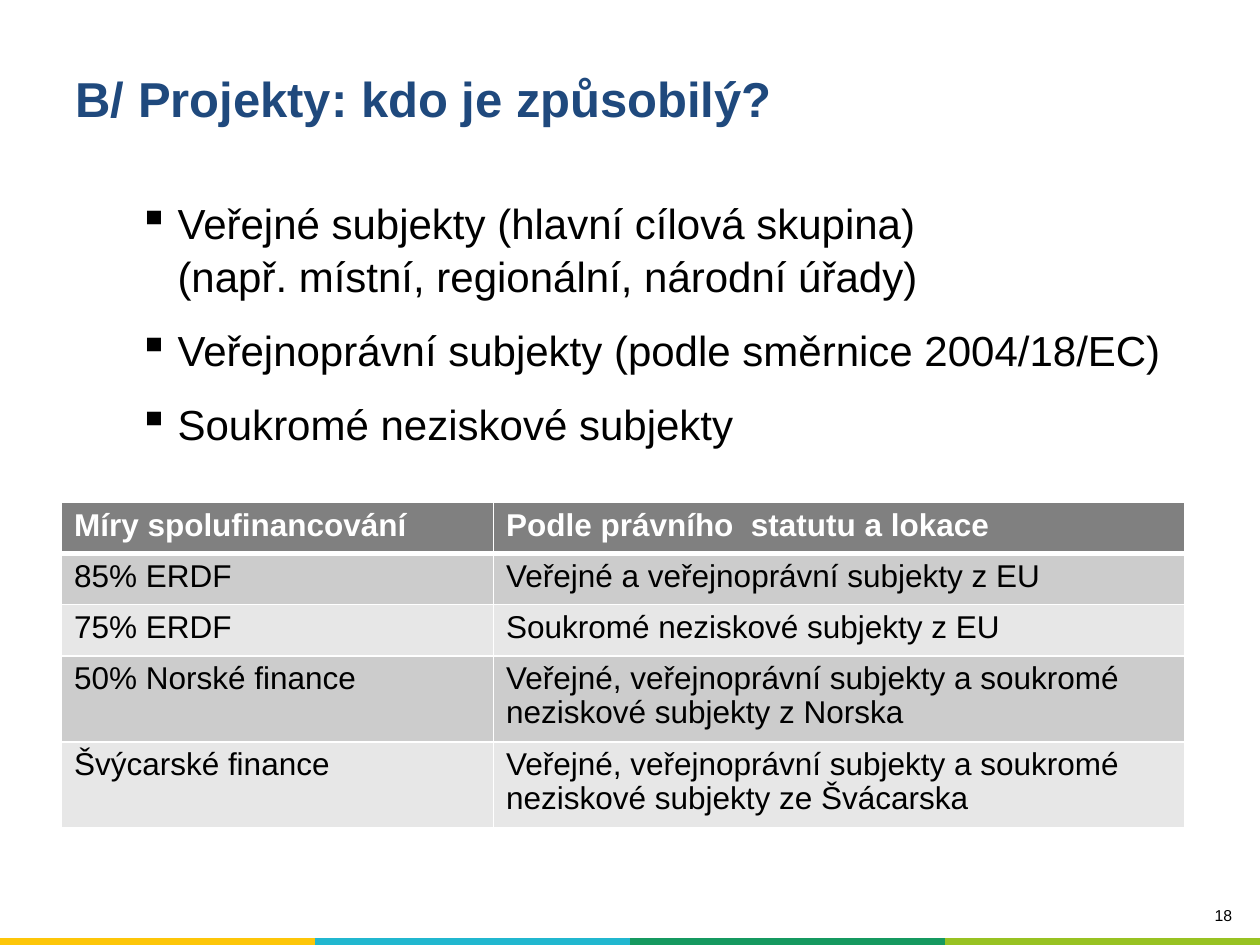
from lxml import etree
from pptx import Presentation
from pptx.dml.color import RGBColor
from pptx.enum import text as t
from pptx.oxml import ns
from pptx.util import Cm, Pt

HUES = {
    "navy": "1F497D", "black": "000000", "white": "FFFFFF",
    "head": "808080", "dark": "CCCCCC", "pale": "E7E7E7",
    "gold": "FDC609", "cyan": "21B7CF", "green": "159960", "lime": "98C222",
}


def write(frame, *lines, size=18, hue="black", bold=False, align=t.PP_ALIGN.LEFT,
          space=None, gap=0, bullet=None):
    """Fill a text frame, one paragraph for each line."""
    frame.word_wrap = True
    for i, line in enumerate(lines):
        para = frame.paragraphs[0] if i == 0 else frame.add_paragraph()
        para.text = line
        para.alignment = align
        para.space_before = Pt(gap if i else 0)
        if space:
            para.line_spacing = space
        if bullet:
            prop = para._p.get_or_add_pPr()
            prop.set("marL", str(Cm(2.06)))
            prop.set("indent", str(-Cm(0.79)))
            etree.SubElement(prop, ns.qn("a:buChar")).set("char", bullet)
        font = para.font
        font.name, font.size, font.bold = "Arial", Pt(size), bold
        font.color.rgb = RGBColor.from_string(HUES[hue])


def paint(cell, hue, **edges):
    """Fill a cell and draw its white edges, with widths in points (0 for none)."""
    prop = cell._tc.get_or_add_tcPr()
    for side in "LRTB":
        width = edges.get(side, 0)
        line = etree.SubElement(prop, ns.qn("a:ln" + side), w=str(Pt(width)))
        if width:
            fill = etree.SubElement(line, ns.qn("a:solidFill"))
            etree.SubElement(fill, ns.qn("a:srgbClr"), val=HUES["white"])
        else:
            etree.SubElement(line, ns.qn("a:noFill"))
    cell.fill.solid()
    cell.fill.fore_color.rgb = RGBColor.from_string(HUES[hue])


deck = Presentation()
deck.slide_width, deck.slide_height = Cm(25.4), Cm(19.05)
slide = deck.slides.add_slide(deck.slide_layouts[5])

# Colour strip along the bottom
strip = slide.shapes.add_table(1, 4, Cm(0), Cm(18.9), Cm(25.4), Cm(0.15)).table
for cell, hue in zip(strip.rows[0].cells, ("gold", "cyan", "green", "lime")):
    cell.margin_left = cell.margin_right = cell.margin_top = cell.margin_bottom = 0
    write(cell.text_frame, "", size=1)
    paint(cell, hue)

# Page number
page = slide.shapes.add_textbox(Cm(20.09), Cm(18.14), Cm(5), Cm(0.79))
write(page.text_frame, "18", size=9, align=t.PP_ALIGN.RIGHT)

# Title
title = slide.shapes.title
title.left, title.top, title.width, title.height = Cm(1.27), Cm(1.19), Cm(22.86), Cm(1.55)
title.text_frame.vertical_anchor = t.MSO_ANCHOR.MIDDLE
write(title.text_frame, "B/ Projekty: kdo je způsobilý?", size=28, hue="navy", bold=True)

# Eligible bodies
body = slide.shapes.add_textbox(Cm(1.27), Cm(3.81), Cm(23.83), Cm(7.5))
write(
    body.text_frame,
    "Veřejné subjekty (hlavní cílová skupina)\v(např. místní, regionální, národní úřady)",
    "Veřejnoprávní subjekty (podle směrnice 2004/18/EC)",
    "Soukromé neziskové subjekty",
    size=24, space=1.05, gap=12, bullet="▪",
)

# Funding rates
rates = [
    ("Míry spolufinancování", "Podle právního  statutu a lokace"),
    ("85% ERDF", "Veřejné a veřejnoprávní subjekty z EU"),
    ("75% ERDF", "Soukromé neziskové subjekty z EU"),
    ("50% Norské finance",
     "Veřejné, veřejnoprávní subjekty a soukromé neziskové subjekty z Norska"),
    ("Švýcarské finance",
     "Veřejné, veřejnoprávní subjekty a soukromé neziskové subjekty ze Švácarska"),
]
grid = slide.shapes.add_table(len(rates), 2, Cm(1.24), Cm(10.13), Cm(22.65), Cm(6.43)).table
grid.columns[0].width, grid.columns[1].width = Cm(8.71), Cm(13.94)
for r, pair in enumerate(rates):
    grid.rows[r].height = Cm(1.03 if r < 3 else 1.67)
    hue = "head" if r == 0 else ("pale", "dark")[r % 2]
    for c, words in enumerate(pair):
        cell = grid.cell(r, c)
        write(cell.text_frame, words, hue="black" if r else "white",
              bold=r == 0, space=0.97)
        paint(cell, hue, L=1, R=1, T=3 if r == 1 else 1, B=1 if r else 3)

deck.save("out.pptx")
